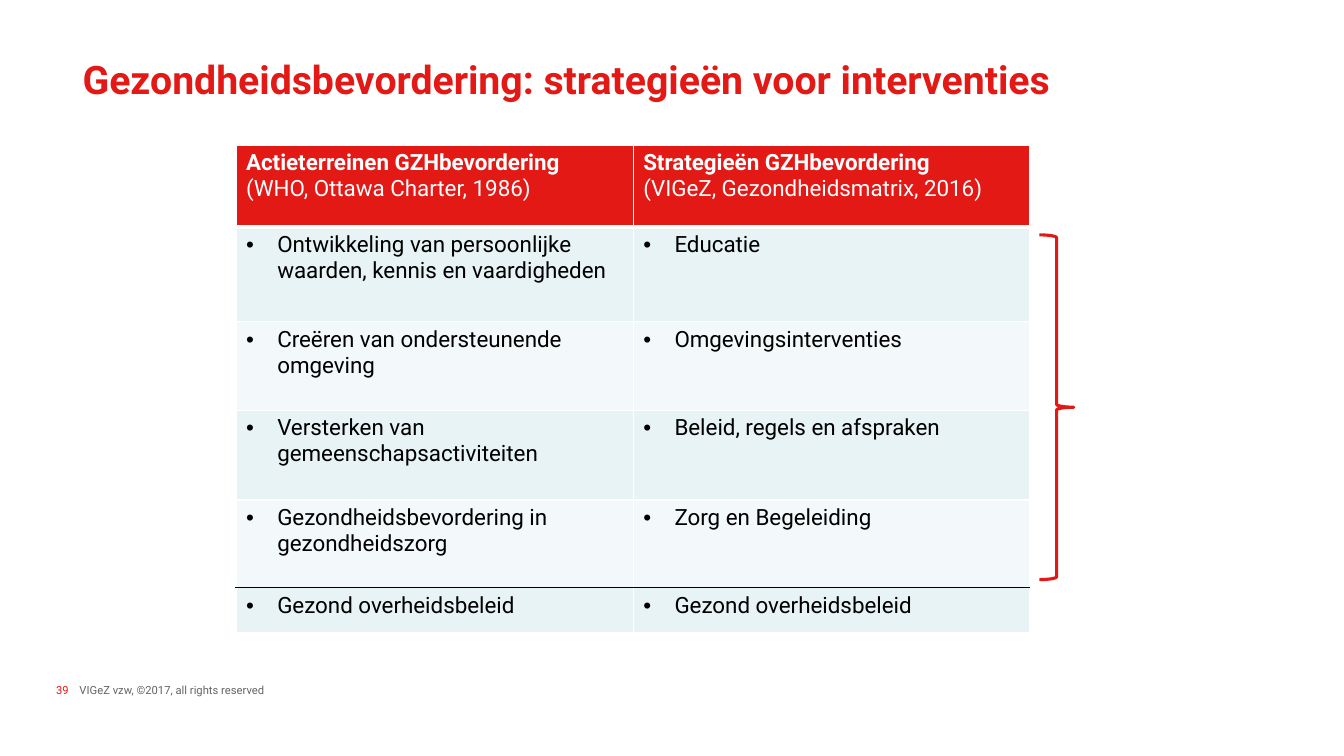
from lxml.etree import SubElement
from pptx import Presentation
from pptx.dml.color import RGBColor
from pptx.enum.shapes import MSO_SHAPE
from pptx.enum.text import MSO_ANCHOR, PP_ALIGN
from pptx.oxml import parse_xml
from pptx.oxml.ns import nsdecls, qn
from pptx.util import Inches, Pt

HUES = {"red": "E31916", "grey": "666366", "white": "FFFFFF", "black": "000000",
        "dark": "E7F3F4", "light": "F3F9FA"}


def tint(name):
    return RGBColor.from_string(HUES[name])


def write(frame, text, size=16, hue="black", bold=False, align=PP_ALIGN.LEFT,
          bullet=False, more=False):
    frame.word_wrap = True
    para = frame.add_paragraph() if more else frame.paragraphs[0]
    para.alignment = align
    if bullet:
        props = para._p.get_or_add_pPr()
        props.set("marL", str(Inches(0.31)))
        props.set("indent", str(Inches(-0.31)))
        SubElement(props, qn("a:buFont"), typeface="Arial")
        SubElement(props, qn("a:buChar"), char="•")
    run = para.add_run()
    run.text = text
    run.font.name = "Roboto"
    run.font.size = Pt(size)
    run.font.bold = bold
    run.font.color.rgb = tint(hue)


def edge(cell, sides):
    props = cell._tc.get_or_add_tcPr()
    for spot, (side, (hue, width)) in enumerate(sides.items()):
        props.insert(spot, parse_xml(
            f'<a:ln{side} {nsdecls("a")} w="{Pt(width)}"><a:solidFill>'
            f'<a:srgbClr val="{HUES[hue]}"/></a:solidFill></a:ln{side}>'))


deck = Presentation()
deck.slide_width = Inches(13.33)
deck.slide_height = Inches(7.5)
slide = deck.slides.add_slide(deck.slide_layouts[5])
shapes = slide.shapes

title = shapes.title
title.left, title.top = Inches(0.72), Inches(0.5)
title.width, title.height = Inches(11.33), Inches(1.25)
title.text_frame.vertical_anchor = MSO_ANCHOR.TOP
write(title.text_frame, "Gezondheidsbevordering: strategieën voor interventies",
      size=28, hue="red", bold=True)

footers = [
    (0.69, 6.33, "VIGeZ vzw, ©2017, all rights reserved", "grey", PP_ALIGN.LEFT),
    (0.11, 0.67, "39", "red", PP_ALIGN.RIGHT),
]
for left, width, text, hue, align in footers:
    box = shapes.add_textbox(Inches(left), Inches(6.73), Inches(width), Inches(0.33))
    write(box.text_frame, text, size=8, hue=hue, align=align)

heads = [
    ("Actieterreinen GZHbevordering", "(WHO, Ottawa Charter, 1986)"),
    ("Strategieën GZHbevordering", "(VIGeZ, Gezondheidsmatrix, 2016)"),
]
rows = [
    ("Ontwikkeling van persoonlijke waarden, kennis en vaardigheden", "Educatie"),
    ("Creëren van ondersteunende omgeving", "Omgevingsinterventies"),
    ("Versterken van gemeenschapsactiviteiten", "Beleid, regels en afspraken"),
    ("Gezondheidsbevordering in gezondheidszorg", "Zorg en Begeleiding"),
    ("Gezond overheidsbeleid", "Gezond overheidsbeleid"),
]
table = shapes.add_table(len(rows) + 1, 2, Inches(2.34), Inches(1.44),
                         Inches(7.87), Inches(4.84)).table
for col, width in zip(table.columns, (3.94, 3.93)):
    col.width = Inches(width)
for row, height in zip(table.rows, (0.81, 0.94, 0.88, 0.89, 0.87, 0.45)):
    row.height = Inches(height)

last = len(rows)
for r, texts in enumerate([heads, *rows]):
    for c, text in enumerate(texts):
        cell = table.cell(r, c)
        sides = dict.fromkeys("LRTB", ("white", 1))
        cell.fill.solid()
        if r == 0:
            cell.fill.fore_color.rgb = tint("red")
            write(cell.text_frame, text[0], hue="white", bold=True)
            write(cell.text_frame, text[1], hue="white", more=True)
            sides["B"] = ("white", 3)
        else:
            cell.fill.fore_color.rgb = tint("dark" if r % 2 else "light")
            write(cell.text_frame, text, bullet=True)
        if r == 1:
            sides["T"] = ("white", 3)
        if r == last - 1:
            sides["B"] = ("black", 1)
        if r == last:
            sides["T"] = ("black", 1)
        edge(cell, sides)

brace = shapes.add_shape(MSO_SHAPE.RIGHT_BRACE, Inches(10.31), Inches(2.33),
                         Inches(0.34), Inches(3.42))
brace.shadow.inherit = False
brace.fill.background()
brace.line.color.rgb = tint("red")
brace.line.width = Pt(2.25)

deck.save("out.pptx")
